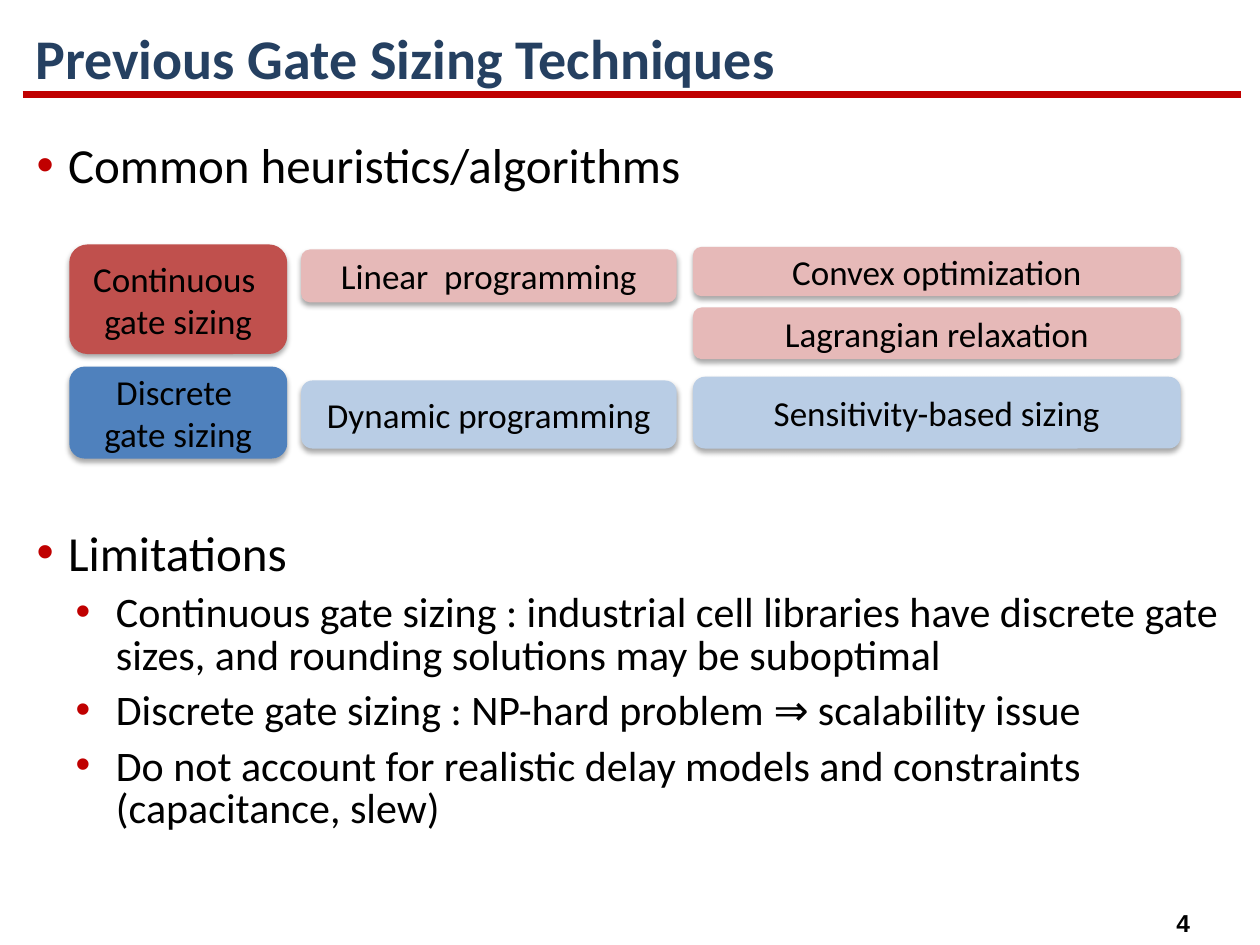
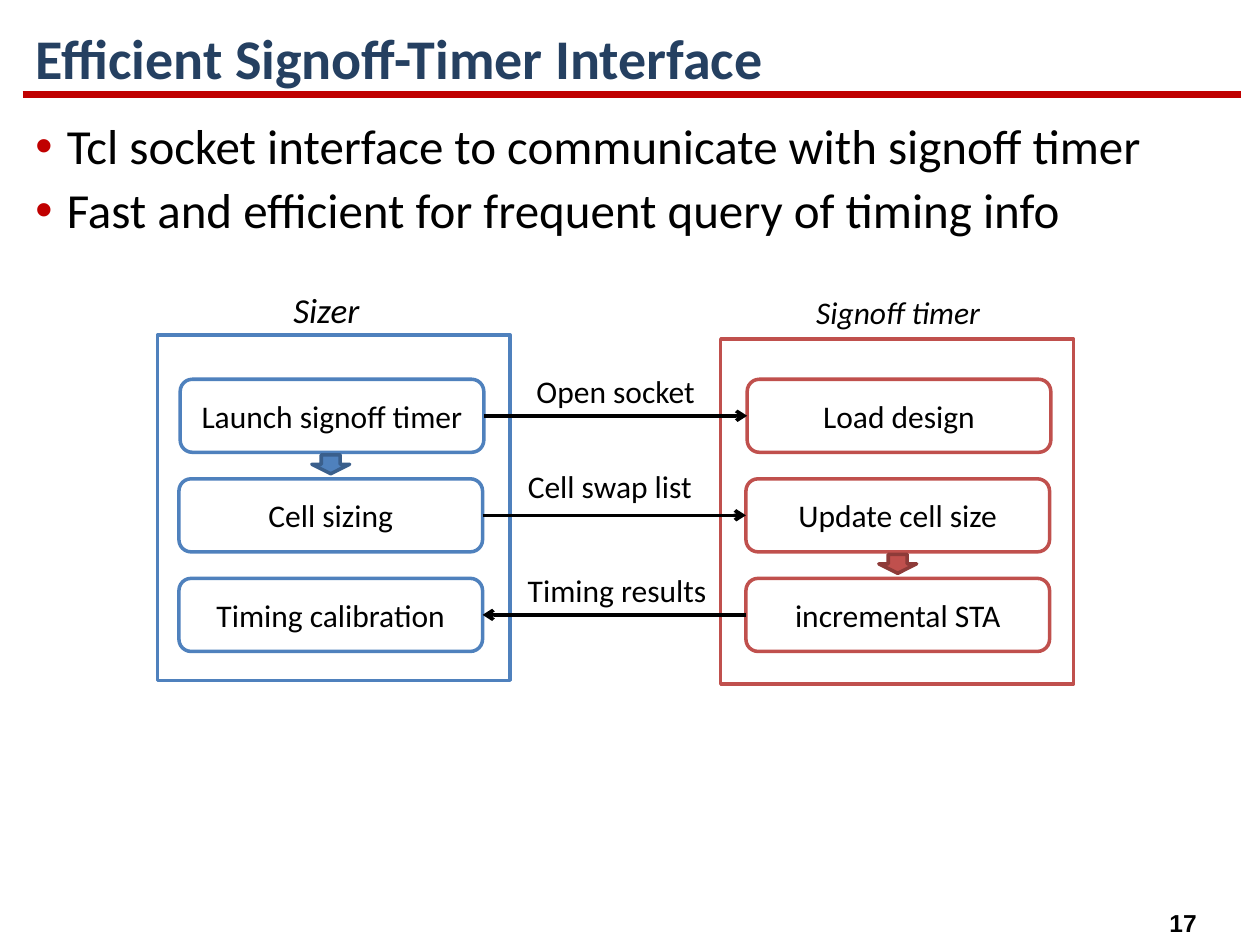
import dataclasses

import lxml.etree
import pptx
import pptx.dml.color
import pptx.enum.shapes
import pptx.enum.text
import pptx.oxml.ns
import pptx.util

Inches, Pt = pptx.util.Inches, pptx.util.Pt
Shape = pptx.enum.shapes.MSO_SHAPE
Align = pptx.enum.text.PP_ALIGN
Anchor = pptx.enum.text.MSO_ANCHOR
TOP, LEFT, BOTTOM, RIGHT = range(4)


@dataclasses.dataclass(frozen=True)
class Theme:
    font: str = "Calibri"
    page_font: str = "Arial"
    ink: str = "000000"
    paper: str = "FFFFFF"
    navy: str = "254061"
    accent: str = "C00000"
    red: str = "C0504D"
    pink: str = "E6B9B8"
    dark_red: str = "8E3B39"
    blue: str = "4F81BD"
    pale_blue: str = "B9CDE5"
    dark_blue: str = "3A5F8C"
    title: int = 32
    levels: tuple = (28, 24)
    big: int = 20
    small: int = 18
    page: int = 14


THEME = Theme()

# Bullets are (level, text, space before in points)
SIZING = {
    "title": "Previous Gate Sizing Techniques",
    "page": "4",
    "body": (0.19, 1.09, 9.66, 5.87),
    "bullets": [
        (0, "Common heuristics/algorithms", 8),
        (0, "Limitations", 193),
        (1, "Continuous gate sizing : industrial cell libraries have discrete "
            "gate sizes, and rounding solutions may be suboptimal", 7),
        (1, "Discrete gate sizing : NP-hard problem ⇒ scalability issue", 7),
        (1, "Do not account for realistic delay models and constraints "
            "(capacitance, slew)", 7),
    ],
}
COLUMNS = [(0.55, 1.73), (2.39, 2.98), (5.5, 3.87)]
# Column, top, height, fill, text
METHODS = [
    (0, 1.94, 0.87, THEME.red, "Continuous \vgate sizing"),
    (0, 2.91, 0.73, THEME.blue, "Discrete \vgate sizing"),
    (1, 1.98, 0.42, THEME.pink, "Linear  programming"),
    (2, 1.96, 0.39, THEME.pink, "Convex optimization"),
    (2, 2.44, 0.41, THEME.pink, "Lagrangian relaxation"),
    (1, 3.02, 0.54, THEME.pale_blue, "Dynamic programming"),
    (2, 2.99, 0.57, THEME.pale_blue, "Sensitivity-based sizing"),
]

TIMER = {
    "title": "Efficient Signoff-Timer Interface",
    "page": "17",
    "body": (0.18, 0.94, 9.55, 1.62),
    "bullets": [
        (0, "Tcl socket interface to communicate with signoff timer", 8),
        (0, "Fast and efficient for frequent query of timing info", 8),
    ],
}
# The arrow follows the step with index "after"
PANELS = [
    {"name": "Sizer", "label": (2.23, 2.24, 0.73, 0.44), "size": THEME.big,
     "frame": (1.25, 2.66), "left": 1.42, "color": THEME.blue,
     "edge": THEME.dark_blue, "after": 0,
     "steps": ["Launch signoff timer", "Cell sizing", "Timing calibration"]},
    {"name": "Signoff timer", "label": (6.38, 2.28, 1.53, 0.4),
     "size": THEME.small,
     "frame": (5.72, 2.69), "left": 5.92, "color": THEME.red,
     "edge": THEME.dark_red, "after": 1,
     "steps": ["Load design", "Update cell size", "incremental STA"]},
]
FRAME = (2.8, 2.74)
STEP = (2.41, 0.58)
STEP_TOP, STEP_GAP = 3.01, 0.79
ARROW = (0.3, 0.15)
# Text, place, whether it goes from the sizer to the timer
MESSAGES = [
    ("Open socket", (4.16, 2.9, 1.47, 0.4), True),
    ("Cell swap list", (4.09, 3.66, 1.52, 0.4), True),
    ("Timing results", (4.09, 4.48, 1.63, 0.4), False),
]


def rgb(color):
    return pptx.dml.color.RGBColor.from_string(color)


def add_xml(parent, tag, **attrs):
    child = lxml.etree.SubElement(parent, pptx.oxml.ns.qn("a:" + tag))
    for key, value in attrs.items():
        child.set(key, str(value))
    return child


def place(shape, box):
    shape.left, shape.top, shape.width, shape.height = map(Inches, box)


def write(para, text, size=THEME.small, color=THEME.ink, font=THEME.font,
          bold=False, italic=False, align=Align.LEFT, spacing=None, before=None):
    para.text = text
    para.alignment = align
    if spacing:
        para.line_spacing = spacing
    if before is not None:
        para.space_before = Pt(before)
    for run in para.runs:
        run.font.size, run.font.name = Pt(size), font
        run.font.bold, run.font.italic = bold, italic
        run.font.color.rgb = rgb(color)


def add_bullet(para, level):
    para.level = level
    props = para._p.get_or_add_pPr()
    margin, hang = ((0.25, 0.25), (0.63, 0.32))[level]
    props.set("marL", str(Inches(margin)))
    props.set("indent", str(-Inches(hang)))
    add_xml(add_xml(props, "buClr"), "srgbClr", val=THEME.accent)
    add_xml(props, "buFont", typeface="Arial")
    add_xml(props, "buChar", char="•")


def add_label(slide, text, box, **style):
    label = slide.shapes.add_textbox(*map(Inches, box))
    label.text_frame.word_wrap = False
    write(label.text_frame.paragraphs[0], text, **style)


def add_box(slide, kind, box, fill=None, line=None, text="", size=THEME.small):
    shape = slide.shapes.add_shape(kind, *map(Inches, box))
    shape.shadow.inherit = False
    if fill:
        shape.fill.solid()
        shape.fill.fore_color.rgb = rgb(fill)
    else:
        shape.fill.background()
    if line:
        shape.line.color.rgb = rgb(line)
        shape.line.width = Pt(2)
    else:
        shape.line.fill.background()
    if text:
        frame = shape.text_frame
        frame.word_wrap = False
        frame.vertical_anchor = Anchor.MIDDLE
        write(frame.paragraphs[0], text, size=size, align=Align.CENTER)
    return shape


def add_shadow(shape):
    effects = shape._element.spPr.find(pptx.oxml.ns.qn("a:effectLst"))
    outer = add_xml(effects, "outerShdw", blurRad=Pt(3.1), dist=Pt(1.8),
                    dir=90 * 60000, rotWithShape=0)
    add_xml(add_xml(outer, "srgbClr", val=THEME.ink), "alpha", val=35000)


def add_line(slide, ends, color, width, arrow=False):
    line = slide.shapes.add_connector(
        pptx.enum.shapes.MSO_CONNECTOR.STRAIGHT, *map(Inches, ends))
    line.line.color.rgb = rgb(color)
    line.line.width = Pt(width)
    if arrow:
        add_xml(line.line._get_or_add_ln(), "tailEnd", type="arrow")
    add_xml(line._element.spPr, "effectLst")
    return line


def add_slide(deck, content):
    """Add a slide with the title, rule, page number and bullets."""
    slide = deck.slides.add_slide(deck.slide_layouts[1])
    title, body = slide.placeholders
    place(title, (0.18, 0.16, 9.68, 0.65))
    place(body, content["body"])
    for holder in (title, body):
        holder.text_frame.auto_size = pptx.enum.text.MSO_AUTO_SIZE.NONE
    title.text_frame.vertical_anchor = Anchor.MIDDLE
    write(title.text_frame.paragraphs[0], content["title"], size=THEME.title,
          color=THEME.navy, bold=True, spacing=0.9)
    frame = body.text_frame
    for i, (level, text, before) in enumerate(content["bullets"]):
        para = frame.add_paragraph() if i else frame.paragraphs[0]
        write(para, text, size=THEME.levels[level], spacing=0.85, before=before)
        add_bullet(para, level)
    add_line(slide, (0.18, 0.75, 9.85, 0.75), THEME.accent, 4.5)
    add_label(slide, content["page"], (9.17, 7.16, 0.44, 0.34), size=THEME.page,
              font=THEME.page_font, bold=True, align=Align.CENTER)
    return slide


def add_methods(slide):
    for column, top, height, fill, text in METHODS:
        left, width = COLUMNS[column]
        add_shadow(add_box(slide, Shape.ROUNDED_RECTANGLE,
                           (left, top, width, height),
                           fill=fill, text=text, size=THEME.big))


def add_panel(slide, panel):
    """Draw a framed column of steps and return the step shapes."""
    add_box(slide, Shape.RECTANGLE, panel["frame"] + FRAME, line=panel["color"])
    add_label(slide, panel["name"], panel["label"], size=panel["size"],
              italic=True)
    steps = []
    for i, text in enumerate(panel["steps"]):
        left = panel["left"] + (0.01 if i == 0 else 0)
        top = STEP_TOP + i * STEP_GAP
        steps.append(add_box(slide, Shape.FLOWCHART_ALTERNATE_PROCESS,
                             (left, top) + STEP, fill=THEME.paper,
                             line=panel["color"], text=text))
    middle = panel["left"] + (STEP[0] - ARROW[0]) / 2
    top = STEP_TOP + panel["after"] * STEP_GAP + STEP[1] + 0.02
    add_box(slide, Shape.DOWN_ARROW, (middle, top) + ARROW,
            fill=panel["color"], line=panel["edge"])
    return steps


def add_messages(slide, sizer, timer):
    for (text, box, ahead), near, far in zip(MESSAGES, sizer, timer):
        line = add_line(slide, (0, 0, 0, 0), THEME.ink, 2, arrow=True)
        ends = [(near, RIGHT), (far, LEFT)]
        start, end = ends if ahead else ends[::-1]
        line.begin_connect(*start)
        line.end_connect(*end)
        add_label(slide, text, box)


def main():
    deck = pptx.Presentation()
    deck.slide_width, deck.slide_height = Inches(10), Inches(7.5)
    add_methods(add_slide(deck, SIZING))
    slide = add_slide(deck, TIMER)
    sizer, timer = [add_panel(slide, panel) for panel in PANELS]
    add_messages(slide, sizer, timer)
    deck.save("out.pptx")


if __name__ == "__main__":
    main()
